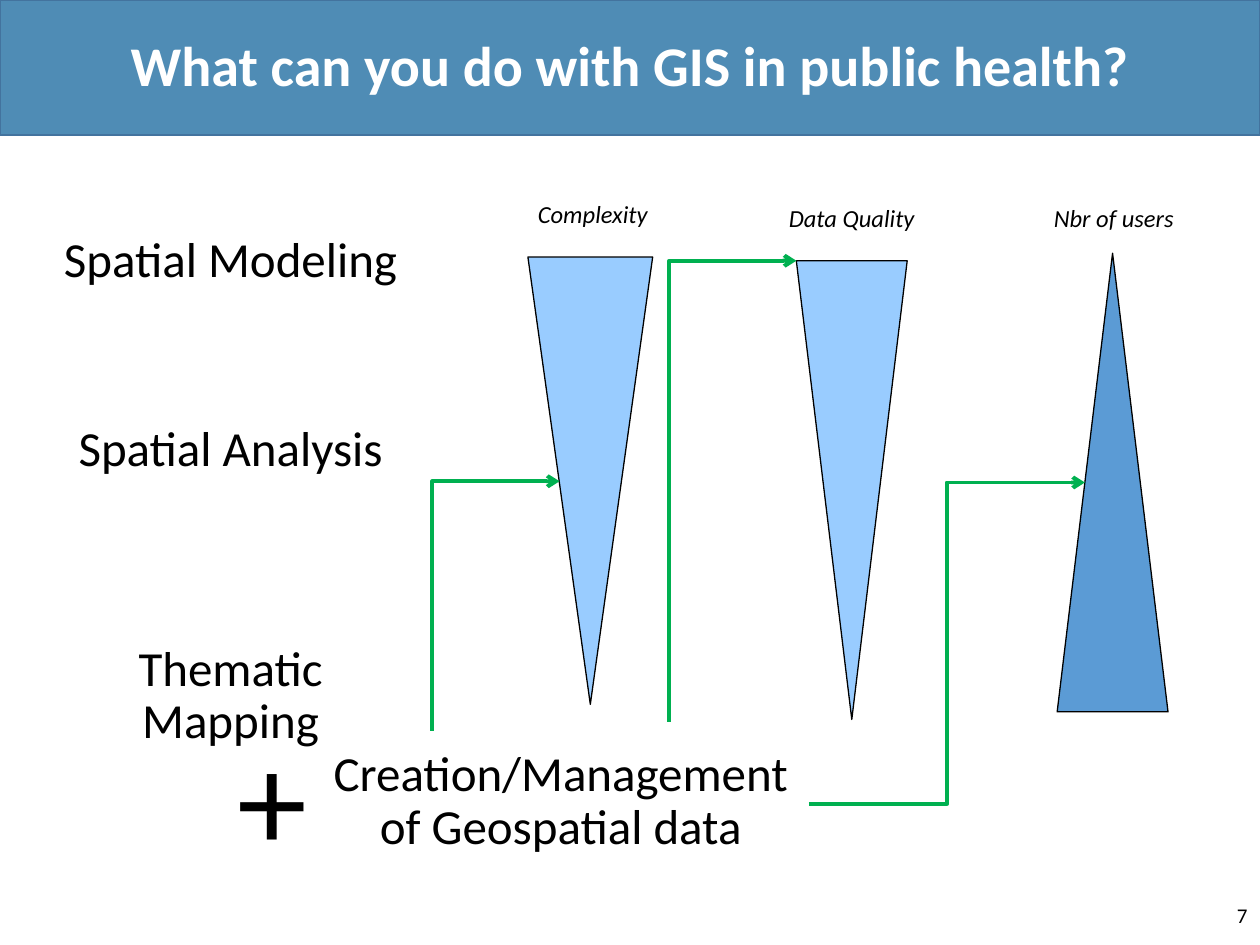
from dataclasses import dataclass

from lxml import etree
from pptx import Presentation
from pptx.dml.color import RGBColor
from pptx.enum.shapes import MSO_CONNECTOR, MSO_SHAPE
from pptx.enum.text import MSO_ANCHOR, PP_ALIGN
from pptx.oxml.ns import qn
from pptx.util import Inches, Pt

# Grid: 100 columns by 75 rows of square cells
CELL = Inches(0.1)
COLUMNS, ROWS = 100, 75

FONT = "Calibri"
BLACK = RGBColor(0x00, 0x00, 0x00)
WHITE = RGBColor(0xFF, 0xFF, 0xFF)
BANNER_BLUE = RGBColor(0x4F, 0x8C, 0xB5)
BANNER_EDGE = RGBColor(0x43, 0x73, 0x9E)
LIGHT_BLUE = RGBColor(0x99, 0xCC, 0xFF)
MID_BLUE = RGBColor(0x5B, 0x9B, 0xD5)
GREEN = RGBColor(0x00, 0xB0, 0x50)

RECTANGLE = MSO_SHAPE.RECTANGLE
TRIANGLE = MSO_SHAPE.ISOSCELES_TRIANGLE
ELBOW = MSO_CONNECTOR.ELBOW
CENTER, RIGHT = PP_ALIGN.CENTER, PP_ALIGN.RIGHT
TOP, MIDDLE = MSO_ANCHOR.TOP, MSO_ANCHOR.MIDDLE


@dataclass(frozen=True)
class Area:
    """A block of the grid, in columns and rows."""
    column: float
    row: float
    width: float
    height: float

    def lengths(self) -> list[int]:
        return [cells(n) for n in (self.column, self.row, self.width, self.height)]


@dataclass(frozen=True)
class Label:
    text: str
    area: Area
    size: float
    color: RGBColor = BLACK
    bold: bool = False
    italic: bool = False
    align: PP_ALIGN = CENTER
    anchor: MSO_ANCHOR = TOP
    spacing: float = 0.9


@dataclass(frozen=True)
class Trend:
    """A captioned triangle that widens or narrows down the slide."""
    caption: str
    caption_area: Area
    area: Area
    fill: RGBColor
    rotation: int = 0


@dataclass(frozen=True)
class Arrow:
    start: tuple[float, float]
    end: tuple[float, float]
    upright_first: bool = True


def cells(count: float) -> int:
    return round(count * CELL)


def activity(text: str, row: float, height: float = 5.2) -> Label:
    return Label(text, Area(3.3, row, 30, height), 28)


LABELS = [
    Label("Creation/Management of Geospatial data", Area(24.8, 59, 39.4, 9.5), 28),
    Label("+", Area(17.7, 57.5, 7.9, 13.1), 80),
    activity("Thematic Mapping", 50.6, 9.4),
    activity("Spatial Analysis", 33.2),
    activity("Spatial Modeling", 18.2),
    Label("7", Area(77.5, 70.6, 22.5, 4), 12, align=RIGHT, anchor=MIDDLE, spacing=1),
    Label("What can you do with GIS in public health?", Area(6.9, 1.6, 86.2, 7.6),
          32, WHITE, bold=True, anchor=MIDDLE),
]

TRENDS = [
    Trend("Data Quality", Area(58.4, 15.6, 18.4, 3.4),
          Area(63.2, 20.7, 8.8, 36.4), LIGHT_BLUE, 180),
    Trend("Nbr of users", Area(79.2, 15.6, 18.4, 3.4),
          Area(83.9, 20.1, 8.8, 36.4), MID_BLUE),
    Trend("Complexity", Area(41.6, 15.3, 10.9, 3.4),
          Area(41.9, 20.4, 9.9, 35.5), LIGHT_BLUE, 180),
]

ARROWS = [
    Arrow((34.3, 58), (44.4, 38.2)),
    Arrow((53.1, 57.3), (63.2, 20.7)),
    Arrow((64.2, 63.8), (86.1, 38.3), upright_first=False),
]


def draw_shape(shapes, kind: MSO_SHAPE, area: Area, fill: RGBColor,
               edge: RGBColor, weight: float, rotation: int = 0) -> None:
    shape = shapes.add_shape(kind, *area.lengths())
    shape.shadow.inherit = False
    shape.rotation = rotation
    shape.fill.solid()
    shape.fill.fore_color.rgb = fill
    shape.line.color.rgb = edge
    shape.line.width = Pt(weight)


def draw_label(shapes, label: Label) -> None:
    frame = shapes.add_textbox(*label.area.lengths()).text_frame
    frame.word_wrap = True
    frame.vertical_anchor = label.anchor
    paragraph = frame.paragraphs[0]
    paragraph.text = label.text
    paragraph.alignment = label.align
    paragraph.line_spacing = label.spacing
    font = paragraph.font
    font.name, font.size = FONT, Pt(label.size)
    font.bold, font.italic = label.bold, label.italic
    font.color.rgb = label.color


def draw_trend(shapes, trend: Trend) -> None:
    draw_shape(shapes, TRIANGLE, trend.area, trend.fill, BLACK, 0.75, trend.rotation)
    draw_label(shapes, Label(trend.caption, trend.caption_area, 14, italic=True,
                             anchor=MIDDLE, spacing=1))


def draw_arrow(shapes, arrow: Arrow) -> None:
    (x1, y1), (x2, y2) = arrow.start, arrow.end
    if arrow.upright_first:
        # Lay the frame on its side; the quarter turn below sets it upright
        mid_x, mid_y = (x1 + x2) / 2, (y1 + y2) / 2
        half_run, half_rise = (x2 - x1) / 2, (y1 - y2) / 2
        x1, y1 = mid_x + half_rise, mid_y + half_run
        x2, y2 = mid_x - half_rise, mid_y - half_run
    connector = shapes.add_connector(ELBOW, *map(cells, (x1, y1, x2, y2)))
    connector.line.color.rgb = GREEN
    connector.line.width = Pt(2.25)
    properties = connector._element.spPr
    if arrow.upright_first:
        properties.find(qn("a:xfrm")).set("rot", str(90 * 60000))
        properties.find(qn("a:prstGeom")).set("prst", "bentConnector2")
    etree.SubElement(properties.find(qn("a:ln")), qn("a:tailEnd"), type="arrow")
    etree.SubElement(properties, qn("a:effectLst"))


def main() -> None:
    presentation = Presentation()
    presentation.slide_width = cells(COLUMNS)
    presentation.slide_height = cells(ROWS)
    blank = presentation.slide_layouts[6]
    shapes = presentation.slides.add_slide(blank).shapes

    # Title banner
    draw_shape(shapes, RECTANGLE, Area(0, 0, COLUMNS, 10.7), BANNER_BLUE, BANNER_EDGE, 1)
    # Trends, then the arrows that point at them
    for trend in TRENDS:
        draw_trend(shapes, trend)
    for arrow in ARROWS:
        draw_arrow(shapes, arrow)
    # Activities, title and page number
    for label in LABELS:
        draw_label(shapes, label)

    presentation.save("out.pptx")


if __name__ == "__main__":
    main()
